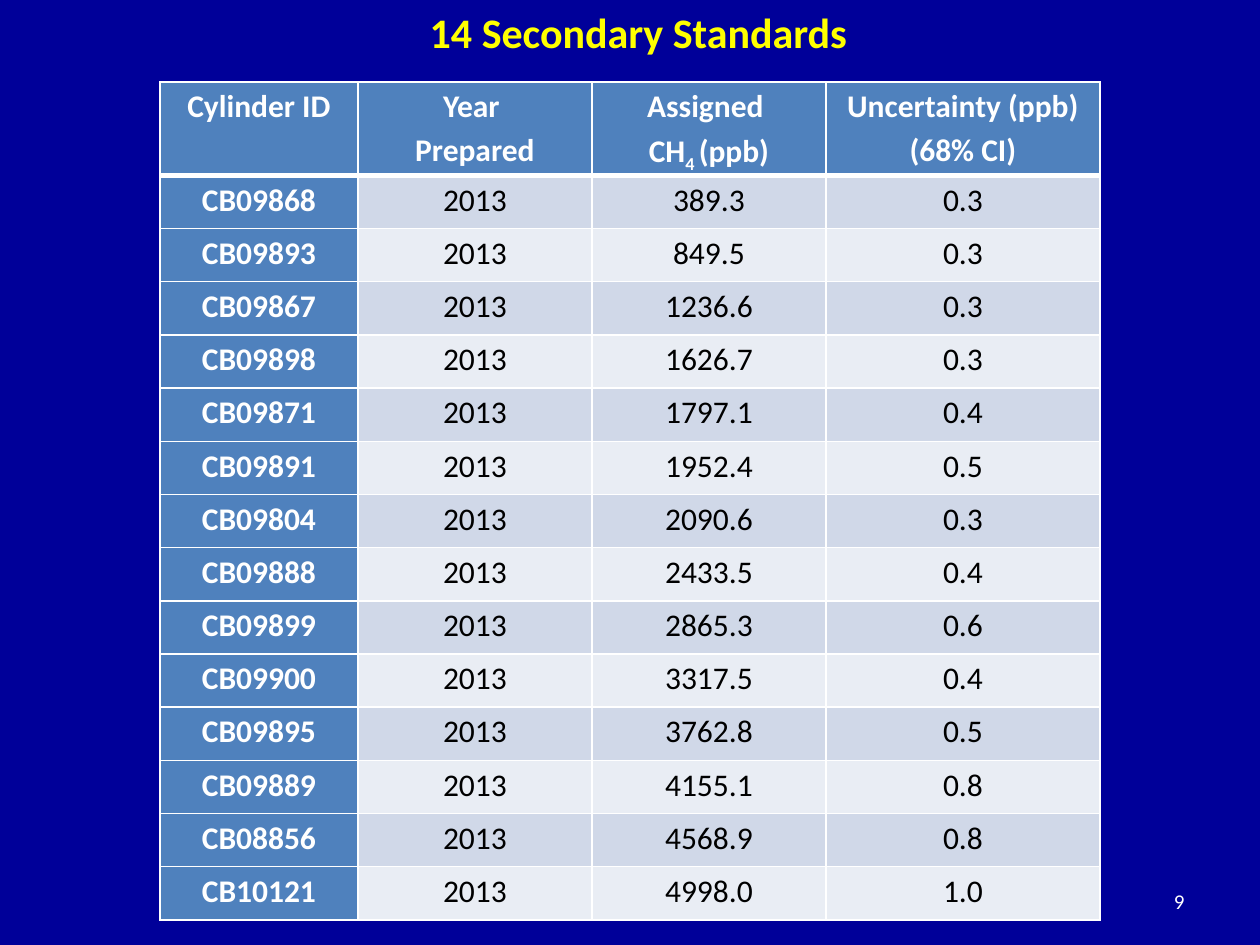
"""Build a slide with a table of fourteen secondary methane standards."""
from dataclasses import dataclass

from lxml import etree
from pptx import Presentation
from pptx import util as u
from pptx.dml.color import RGBColor
from pptx.enum import text
from pptx.oxml import ns

PX_PER_INCH = 126
FONT = "Calibri"
COLOURS = {
    "page": "000099", "title": "FFFF00", "white": "FFFFFF", "black": "000000",
    "accent": "4F81BD", "odd_band": "D0D8E8", "even_band": "E9EDF4",
}


@dataclass(frozen=True)
class Span:
    wording: str
    baseline: int = 0


@dataclass(frozen=True)
class Style:
    size: int
    colour: str
    bold: bool = False
    align: text.PP_ALIGN = text.PP_ALIGN.CENTER
    spacing: float | None = None


@dataclass(frozen=True)
class Label:
    wording: str
    left: int
    top: int
    width: int
    height: int
    style: Style
    anchor: text.MSO_ANCHOR = text.MSO_ANCHOR.TOP


@dataclass(frozen=True)
class Standard:
    cylinder: str
    methane: str
    uncertainty: str
    year: str = "2013"


LABELS = [
    Label("9", 903, 876, 294, 50, Style(12, "white", align=text.PP_ALIGN.RIGHT),
          text.MSO_ANCHOR.MIDDLE),
    Label("14 Secondary Standards", 410, 0, 457, 63, Style(24, "title", bold=True)),
]
HEADING_STYLE = Style(18, "white", bold=True, spacing=1.15)
VALUE_STYLE = Style(18, "black", spacing=1.15)
HEADINGS = [
    [[Span("Cylinder ID")]],
    [[Span("Year ")], [Span("Prepared")]],
    [[Span("Assigned ")], [Span("CH"), Span("4 ", -25000), Span("(ppb)")]],
    [[Span("Uncertainty (ppb)")], [Span("(68% CI)")]],
]
STANDARDS = [
    Standard("CB09868", "389.3", "0.3"),
    Standard("CB09893", "849.5", "0.3"),
    Standard("CB09867", "1236.6", "0.3"),
    Standard("CB09898", "1626.7", "0.3"),
    Standard("CB09871", "1797.1", "0.4"),
    Standard("CB09891", "1952.4", "0.5"),
    Standard("CB09804", "2090.6", "0.3"),
    Standard("CB09888", "2433.5", "0.4"),
    Standard("CB09899", "2865.3", "0.6"),
    Standard("CB09900", "3317.5", "0.4"),
    Standard("CB09895", "3762.8", "0.5"),
    Standard("CB09889", "4155.1", "0.8"),
    Standard("CB08856", "4568.9", "0.8"),
    Standard("CB10121", "4998.0", "1.0"),
]
TABLE_LEFT, TABLE_TOP = 160, 82
COLUMN_WIDTHS = [198, 234, 234, 274]
HEADING_HEIGHT, BODY_HEIGHT = 84, 745


def px(length: int) -> int:
    return u.Inches(length / PX_PER_INCH)


def colour(name: str) -> RGBColor:
    return RGBColor.from_string(COLOURS[name])


def write(frame, lines: list[list[Span]], style: Style) -> None:
    for index, line in enumerate(lines):
        para = frame.add_paragraph() if index else frame.paragraphs[0]
        para.alignment = style.align
        para.line_spacing = style.spacing
        for span in line:
            run = para.add_run()
            run.text = span.wording
            run.font.name = FONT
            run.font.size = u.Pt(style.size)
            run.font.bold = style.bold
            run.font.color.rgb = colour(style.colour)
            if span.baseline:
                run.font._element.set("baseline", str(span.baseline))


def add_label(page, label: Label) -> None:
    box = page.shapes.add_textbox(
        px(label.left), px(label.top), px(label.width), px(label.height))
    box.text_frame.word_wrap = True
    box.text_frame.vertical_anchor = label.anchor
    write(box.text_frame, [[Span(label.wording)]], label.style)


def set_borders(cell, widths: dict[str, int]) -> None:
    properties = cell._tc.get_or_add_tcPr()
    for index, (side, width) in enumerate(widths.items()):
        line = etree.Element(ns.qn(f"a:ln{side}"), w=str(u.Pt(width)))
        fill = etree.SubElement(line, ns.qn("a:solidFill"))
        etree.SubElement(fill, ns.qn("a:srgbClr"), val=COLOURS["white"])
        properties.insert(index, line)


def fill_cell(cell, lines: list[list[Span]], row: int, column: int) -> None:
    heading = row == 0 or column == 0
    band = "odd_band" if row % 2 else "even_band"
    cell.margin_left = cell.margin_right = px(9)
    cell.margin_top = cell.margin_bottom = 0
    cell.fill.solid()
    cell.fill.fore_color.rgb = colour("accent" if heading else band)
    write(cell.text_frame, lines, HEADING_STYLE if heading else VALUE_STYLE)
    set_borders(cell, {"L": 1, "R": 1, "T": 3 if row == 1 else 1, "B": 1 if row else 3})


def add_standards_table(page) -> None:
    rows = [HEADINGS] + [
        [[[Span(value)]] for value in (item.cylinder, item.year, item.methane, item.uncertainty)]
        for item in STANDARDS
    ]
    table = page.shapes.add_table(
        len(rows), len(COLUMN_WIDTHS), px(TABLE_LEFT), px(TABLE_TOP),
        px(sum(COLUMN_WIDTHS)), px(HEADING_HEIGHT + BODY_HEIGHT)).table
    table.first_col = True
    for column, width in zip(table.columns, COLUMN_WIDTHS):
        column.width = px(width)
    for row, cells in enumerate(rows):
        table.rows[row].height = px(BODY_HEIGHT) // len(STANDARDS) if row else px(HEADING_HEIGHT)
        for column, lines in enumerate(cells):
            fill_cell(table.cell(row, column), lines, row, column)


def main() -> None:
    deck = Presentation()
    deck.slide_width, deck.slide_height = px(1260), px(945)
    page = deck.slides.add_slide(deck.slide_layouts[6])
    page.background.fill.solid()
    page.background.fill.fore_color.rgb = colour("page")
    add_standards_table(page)
    for label in LABELS:
        add_label(page, label)
    deck.save("out.pptx")


if __name__ == "__main__":
    main()
